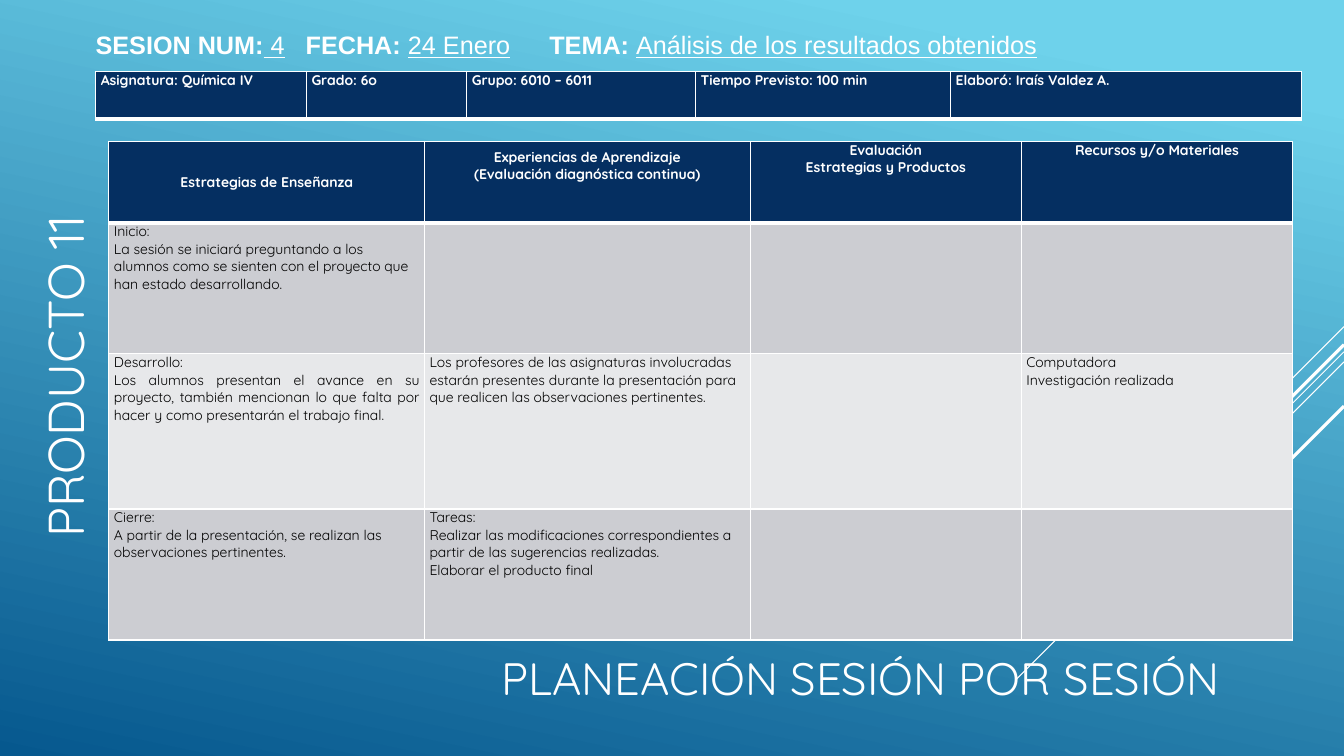
from lxml import etree
from pptx import Presentation
from pptx import util as u
from pptx.dml.color import RGBColor
from pptx.enum import shapes, text
from pptx.oxml import ns

COLOURS = {"white": "FFFFFF", "black": "000000", "navy": "052F61",
           "band_dark": "CCCDD2", "band_light": "E7E8EA",
           "sky": "6ED2EB", "deep": "06588E"}
ALIGN = {"l": text.PP_ALIGN.LEFT, "c": text.PP_ALIGN.CENTER, "j": text.PP_ALIGN.JUSTIFY}


def add_run(paragraph, words, colour, **format_values):
    run = paragraph.add_run()
    run.text = words
    run.font.color.rgb = RGBColor.from_string(COLOURS[colour])
    for key, value in format_values.items():
        setattr(run.font, key, value)


def build_table(left, top, widths, heights, rows):
    """Each cell is a list of (alignment, words); the first row is the header."""
    table = slide.shapes.add_table(
        len(heights), len(widths), u.Inches(left), u.Inches(top),
        u.Inches(sum(widths)), u.Inches(sum(heights))).table
    for column, width in zip(table.columns, widths):
        column.width = u.Inches(width)
    for r, height in enumerate(heights):
        table.rows[r].height = u.Inches(height)
        header = r == 0
        fill = "navy" if header else ("band_dark" if r % 2 else "band_light")
        for c, lines in enumerate(rows[r]):
            cell = table.cell(r, c)
            margins = {"margin_left": 0.05, "margin_right": 0.05,
                       "margin_top": 0, "margin_bottom": 0}
            for key, value in margins.items():
                setattr(cell, key, u.Inches(value))
            cell.fill.solid()
            cell.fill.fore_color.rgb = RGBColor.from_string(COLOURS[fill])
            # White borders, with a thick rule under the header
            borders = {"lnL": 1, "lnR": 1, "lnT": 3 if r == 1 else 1, "lnB": 3 if header else 1}
            properties = cell._tc.get_or_add_tcPr()
            for place, (side, points) in enumerate(borders.items()):
                border = etree.Element(ns.qn("a:" + side), w=str(u.Pt(points)))
                solid = etree.SubElement(border, ns.qn("a:solidFill"))
                etree.SubElement(solid, ns.qn("a:srgbClr"), val=COLOURS["white"])
                properties.insert(place, border)
            for n, (alignment, words) in enumerate(lines):
                frame = cell.text_frame
                paragraph = frame.add_paragraph() if n else frame.paragraphs[0]
                paragraph.alignment = ALIGN[alignment]
                add_run(paragraph, words, "white" if header else "black",
                        name="Quicksand", size=u.Pt(10), bold=header)
    return table


prs = Presentation()
prs.slide_width, prs.slide_height = u.Inches(13.33), u.Inches(7.5)
slide = prs.slides.add_slide(prs.slide_layouts[5])

# Background gradient
backdrop = slide.background.fill
backdrop.gradient()
backdrop.gradient_angle = 258
for stop, (colour, position) in zip(backdrop.gradient_stops, [("sky", 0.1), ("deep", 1)]):
    stop.color.rgb = RGBColor.from_string(COLOURS[colour])
    stop.position = position

# Diagonal rays from the right edge: start height, run, width
for start, run, points in [(3.24, 1, 0.75), (3.49, 3.26, 0.75), (3.59, 2.07, 0.75),
                           (3.42, 1.91, 2.25), (4.03, 1.39, 2.25)]:
    ray = slide.shapes.add_connector(
        shapes.MSO_CONNECTOR.STRAIGHT, u.Inches(13.33), u.Inches(start),
        u.Inches(13.33 - run), u.Inches(start + run))
    ray.line.color.rgb = RGBColor.from_string(COLOURS["white"])
    ray.line.width = u.Pt(points)
    etree.SubElement(ray._element.spPr, ns.qn("a:effectLst"))

# Title in front of the rays, product label and session line
title = slide.shapes.title
slide.shapes._spTree.append(title._element)
product = slide.shapes.add_textbox(0, 0, 0, 0)
product.rotation = 270
session = slide.shapes.add_textbox(0, 0, 0, 0)
session_runs = [("SESION NUM:", False), (" 4", True), ("   FECHA: ", False),
                ("24 Enero", True), ("\tTEMA: ", False),
                ("Análisis de los resultados obtenidos", True)]
for box, area, anchor in [(title, (4.87, 6.42, 8.38, 0.61), text.MSO_ANCHOR.MIDDLE),
                          (product, (-1.61, 2.75, 4.49, 0.88), text.MSO_ANCHOR.MIDDLE),
                          (session, (0.85, -0.07, 12.09, 0.71), text.MSO_ANCHOR.BOTTOM)]:
    box.left, box.top, box.width, box.height = map(u.Inches, area)
    layout = {"word_wrap": True, "auto_size": text.MSO_AUTO_SIZE.NONE, "vertical_anchor": anchor}
    for key, value in layout.items():
        setattr(box.text_frame, key, value)
    box.text_frame.paragraphs[0].alignment = ALIGN["l"]
add_run(title.text_frame.paragraphs[0], "PLANEACIÓN SESIÓN POR SESIÓN", "white",
        name="Quicksand", size=u.Pt(32.4))
add_run(product.text_frame.paragraphs[0], "PRODUCTO 11", "white",
        name="Quicksand", size=u.Pt(36))
for words, is_value in session_runs:
    add_run(session.text_frame.paragraphs[0], words, "white", name="Arial",
            size=u.Pt(18), bold=not is_value, underline=is_value)

# Course details
build_table(0.95, 0.71, [2.09, 1.59, 2.27, 2.53, 3.48], [0.47], [
    [[("l", "Asignatura: Química IV")], [("l", "Grado: 6o")], [("l", "Grupo: 6010 – 6011")],
     [("l", "Tiempo Previsto: 100 min")], [("l", "Elaboró: Iraís Valdez A.")]]])

# Session plan
plan = build_table(1.08, 1.4, [3.13, 3.23, 2.69, 2.69], [0.81, 1.3, 1.54, 1.3], [
    [[("c", "Estrategias de Enseñanza")],
     [("c", "Experiencias de Aprendizaje"), ("c", "(Evaluación diagnóstica continua)")],
     [("c", "Evaluación"), ("c", "Estrategias y Productos")],
     [("c", "Recursos y/o Materiales")]],
    [[("l", "Inicio:"),
      ("l", "La sesión se iniciará preguntando a los alumnos como se sienten con el "
            "proyecto que han estado desarrollando.")], [], [], []],
    [[("l", "Desarrollo:"),
      ("j", "Los alumnos presentan el avance en su proyecto, también mencionan lo que "
            "falta por hacer y como presentarán el trabajo final.")],
     [("l", "Los profesores de las asignaturas involucradas estarán presentes durante la "
            "presentación para que realicen las observaciones pertinentes.")],
     [], [("l", "Computadora"), ("l", "Investigación realizada")]],
    [[("l", "Cierre:"),
      ("l", "A partir de la presentación, se realizan las observaciones pertinentes.")],
     [("l", "Tareas:"),
      ("l", "Realizar las modificaciones correspondientes a partir de las sugerencias "
            "realizadas."),
      ("l", "Elaborar el producto final")], [], []]])
for c in range(2):
    plan.cell(0, c).vertical_anchor = text.MSO_ANCHOR.MIDDLE
plan.cell(0, 1).margin_bottom = u.Inches(0.32)

# Session line in front of the tables
slide.shapes._spTree.append(session._element)

prs.save("out.pptx")
